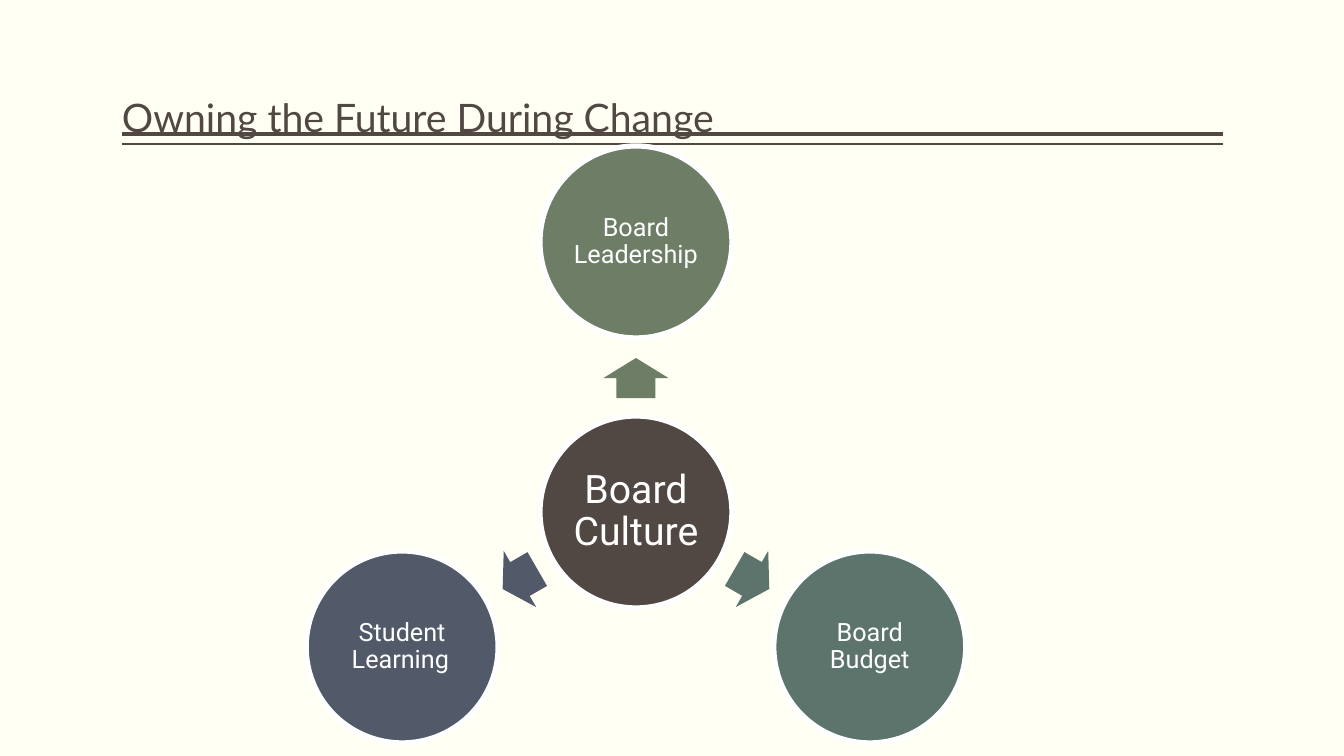
import math
from dataclasses import dataclass

from pptx import Presentation
from pptx import util as u
from pptx.dml.color import RGBColor
from pptx.enum import shapes, text
from pptx.oxml import parse_xml
from pptx.oxml.ns import nsdecls


@dataclass(frozen=True)
class Theme:
    paper: str = "FFFFF3"
    dark: str = "514843"
    white: str = "FFFFFF"
    green: str = "6D7D66"
    teal: str = "5C746C"
    slate: str = "525A6A"
    head: str = "Lato"
    body: str = "Roboto"
    large: int = 28
    small: int = 18


THEME = Theme()
TITLE = "Owning the Future During Change"
HUB = "Board Culture"
SPOKES = [
    ("Board Leadership", THEME.green, 270),
    ("Board Budget", THEME.teal, 30),
    ("Student Learning\t", THEME.slate, 150),
]
RULES = [(134, 3), (144, 1)]

WIDE, HIGH = 1344, 756
LEFT, RIGHT = 122, 1223
MID = (636, 512)
DISC, ORBIT = 192, 270
ARROW = (40, 65)
REACH = 134


def px(n):
    return round(n * 914400 / 100.8)


def rgb(code):
    return RGBColor.from_string(code)


def write(frame, words, font, size, color, align, anchor, pad):
    frame.text = words
    frame.word_wrap = True
    frame.auto_size = text.MSO_AUTO_SIZE.NONE
    frame.vertical_anchor = anchor
    frame.margin_left, frame.margin_top, frame.margin_right, frame.margin_bottom = map(px, pad)
    para = frame.paragraphs[0]
    para.alignment = align
    para.line_spacing = 0.9
    para.font.name = font
    para.font.size = u.Pt(size)
    para.font.color.rgb = rgb(color)


def orbit(angle, dist):
    turn = math.radians(angle)
    return MID[0] + dist * math.cos(turn), MID[1] + dist * math.sin(turn)


def place(slide, kind, mid, size, color):
    (x, y), (w, h) = mid, size
    shape = slide.shapes.add_shape(kind, px(x - w / 2), px(y - h / 2), px(w), px(h))
    shape.shadow.inherit = False
    shape.fill.solid()
    shape.fill.fore_color.rgb = rgb(color)
    shape.line.fill.background()
    return shape


def disc(slide, words, mid, color, size, pad):
    shape = place(slide, shapes.MSO_SHAPE.OVAL, mid, (DISC, DISC), color)
    shape.line.color.rgb = rgb(THEME.white)
    shape.line.width = u.Pt(3.78)
    write(shape.text_frame, words, THEME.body, size, THEME.white,
          text.PP_ALIGN.CENTER, text.MSO_ANCHOR.MIDDLE, [pad] * 4)


def arrow(slide, angle, color):
    shape = place(slide, shapes.MSO_SHAPE.RIGHT_ARROW, orbit(angle, REACH), ARROW, color)
    shape.adjustments[0] = 0.6
    shape.adjustments[1] = 0.5
    shape.rotation = angle


def rule(slide, y, width):
    line = slide.shapes.add_connector(
        shapes.MSO_CONNECTOR.STRAIGHT, px(LEFT), px(y), px(RIGHT), px(y))
    line.line.color.rgb = rgb(THEME.dark)
    line.line.width = u.Pt(width)
    line._element.spPr.append(parse_xml(f"<a:effectLst {nsdecls('a')}/>"))


def main():
    deck = Presentation()
    deck.slide_width, deck.slide_height = px(WIDE), px(HIGH)
    slide = deck.slides.add_slide(deck.slide_layouts[5])
    slide.background.fill.solid()
    slide.background.fill.fore_color.rgb = rgb(THEME.paper)

    title = slide.shapes.title
    title.left, title.top = px(LEFT), px(25)
    title.width, title.height = px(RIGHT - LEFT), px(121)
    write(title.text_frame, TITLE, THEME.head, THEME.large, THEME.dark,
          text.PP_ALIGN.LEFT, text.MSO_ANCHOR.BOTTOM, [0, 5, 0, 5])
    for y, width in RULES:
        rule(slide, y, width)

    disc(slide, HUB, MID, THEME.dark, THEME.large, 4)
    for words, color, angle in SPOKES:
        arrow(slide, angle, color)
        disc(slide, words, orbit(angle, ORBIT), color, THEME.small, 3)
    deck.save("out.pptx")


if __name__ == "__main__":
    main()
